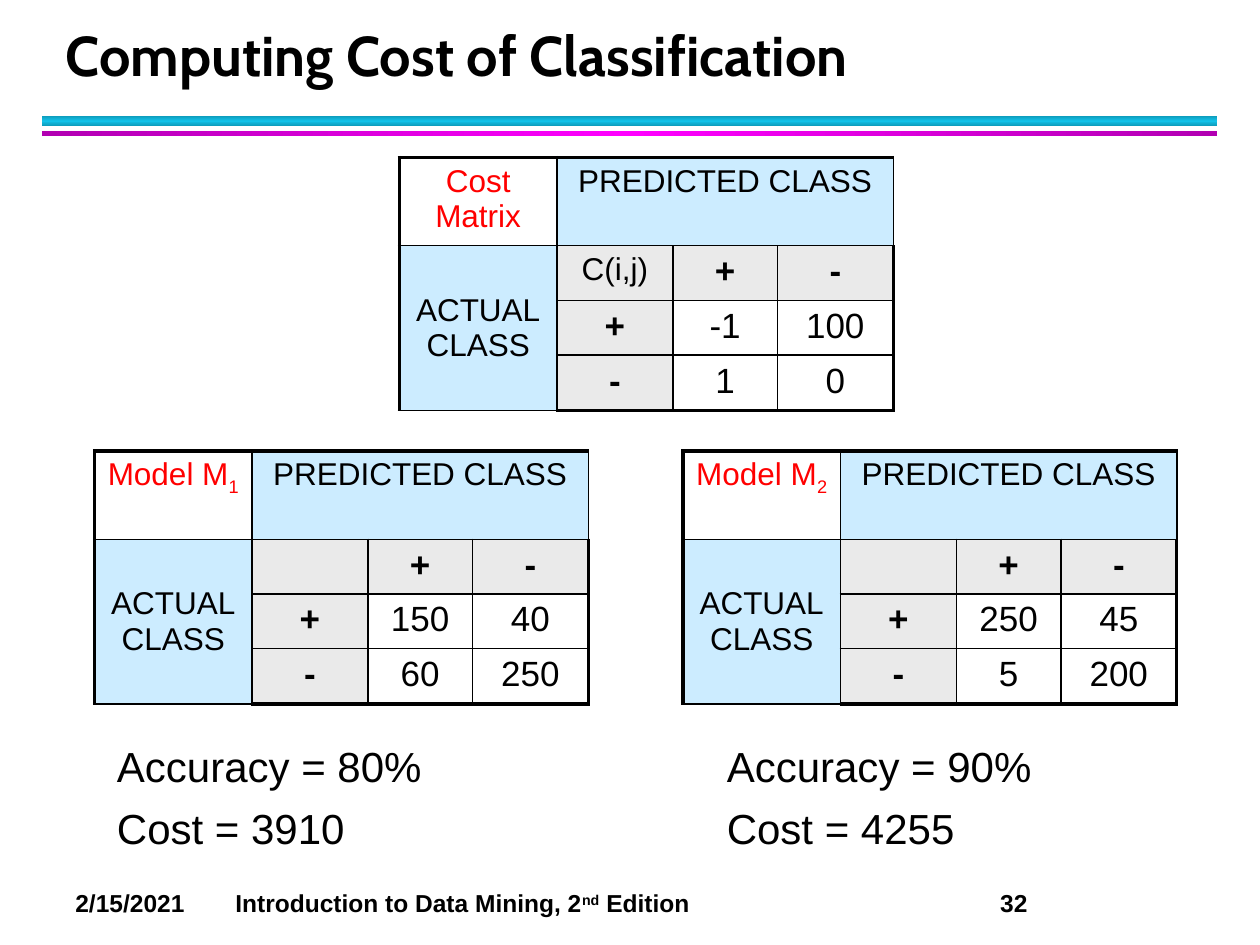
from copy import deepcopy
from dataclasses import dataclass

from lxml import etree
from pptx import Presentation
from pptx.dml.color import RGBColor
from pptx.enum.shapes import MSO_SHAPE
from pptx.enum.text import MSO_ANCHOR, PP_ALIGN
from pptx.oxml.ns import qn
from pptx.util import Inches, Pt

RECTANGLE = MSO_SHAPE.RECTANGLE
LEFT, CENTER = PP_ALIGN.LEFT, PP_ALIGN.CENTER
MIDDLE, BOTTOM = MSO_ANCHOR.MIDDLE, MSO_ANCHOR.BOTTOM

BLACK = RGBColor(0x00, 0x00, 0x00)
RED = RGBColor(0xFF, 0x00, 0x00)
PALE_BLUE = RGBColor(0xCC, 0xEC, 0xFF)
PALE_GRAY = RGBColor(0xEA, 0xEA, 0xEA)
TEAL = RGBColor(0x0E, 0x9B, 0xBA)
CYAN = RGBColor(0x12, 0xC2, 0xE9)
PURPLE = RGBColor(0xB2, 0x00, 0xB2)
MAGENTA = RGBColor(0xFF, 0x00, 0xFF)

COL_WIDTHS = (1.25, 0.92, 0.83, 0.92)
ROW_HEIGHTS = (0.7, 0.43, 0.43, 0.44)
OUTER_LINE, INNER_LINE = Pt(2.25), Pt(1)


@dataclass
class Bar:
    top: float
    height: float
    edge: RGBColor
    middle: RGBColor
    angle: int


@dataclass
class Matrix:
    left: float
    top: float
    name: str
    subscript: str
    corner: str
    counts: tuple[tuple[str, str], tuple[str, str]]


@dataclass
class Result:
    left: float
    lines: tuple[str, str]


BARS = (
    Bar(0.92, 0.08, TEAL, CYAN, 90),
    Bar(1.04, 0.04, PURPLE, MAGENTA, 0),
)
MATRICES = (
    Matrix(3.17, 1.25, "Cost Matrix", "", "C(i,j)", (("-1", "100"), ("1", "0"))),
    Matrix(0.75, 3.58, "Model M", "1", "", (("150", "40"), ("60", "250"))),
    Matrix(5.42, 3.58, "Model M", "2", "", (("250", "45"), ("5", "200"))),
)
RESULTS = (
    Result(0.83, ("Accuracy = 80%", "Cost = 3910")),
    Result(5.67, ("Accuracy = 90%", "Cost = 4255")),
)


def set_font(p, size: float, color=BLACK, bold=False, name="Arial") -> None:
    font = p.font
    font.name, font.size, font.bold = name, Pt(size), bold
    font.color.rgb = color


def add_run(p, text: str, baseline: int = 0) -> None:
    """Add a run, raised or lowered by a percentage of the font size."""
    r = p.add_run()
    r.text = text
    if baseline:
        r.font._element.set("baseline", str(baseline * 1000))


def add_bar(s, bar: Bar) -> None:
    sp = s.shapes.add_shape(RECTANGLE, Inches(0.33), Inches(bar.top),
                            Inches(9.33), Inches(bar.height))
    sp.shadow.inherit = False
    sp.line.fill.background()
    sp.fill.gradient()
    sp.fill.gradient_angle = bar.angle
    stops = sp._element.spPr.find(f".//{qn('a:gsLst')}")
    stops.insert(1, deepcopy(stops[0]))
    colors = (bar.edge, bar.middle, bar.edge)
    for i, (stop, color) in enumerate(zip(sp.fill.gradient_stops, colors)):
        stop.position = i / 2
        stop.color.rgb = color


def set_borders(cell, row: int, col: int) -> None:
    """Draw thick lines on the table's outer edges and thin ones inside."""
    outer = {"L": col == 0, "R": col == len(COL_WIDTHS) - 1,
             "T": row == 0, "B": row == len(ROW_HEIGHTS) - 1}
    tc_pr = cell._tc.get_or_add_tcPr()
    for side, is_outer in outer.items():
        width = OUTER_LINE if is_outer else INNER_LINE
        ln = etree.SubElement(tc_pr, qn(f"a:ln{side}"), w=str(width))
        fill = etree.SubElement(ln, qn("a:solidFill"))
        etree.SubElement(fill, qn("a:srgbClr"), val=str(BLACK))


def set_cell(cell, text: str, size=20, color=BLACK, bold=False, fill=None) -> None:
    p = cell.text_frame.paragraphs[0]
    p.text = text
    p.alignment = CENTER
    set_font(p, size, color, bold)
    if fill is None:
        cell.fill.background()
    else:
        cell.fill.solid()
        cell.fill.fore_color.rgb = fill


def add_matrix(s, m: Matrix) -> None:
    table = s.shapes.add_table(
        len(ROW_HEIGHTS), len(COL_WIDTHS), Inches(m.left), Inches(m.top),
        Inches(sum(COL_WIDTHS)), Inches(sum(ROW_HEIGHTS))).table
    table.first_row = table.horz_banding = False
    for column, width in zip(table.columns, COL_WIDTHS):
        column.width = Inches(width)
    for row, height in zip(table.rows, ROW_HEIGHTS):
        row.height = Inches(height)
    for row in range(len(ROW_HEIGHTS)):
        for col in range(len(COL_WIDTHS)):
            set_borders(table.cell(row, col), row, col)

    name, predicted, actual = table.cell(0, 0), table.cell(0, 1), table.cell(1, 0)
    predicted.merge(table.cell(0, 3))
    actual.merge(table.cell(3, 0))
    set_cell(name, m.name, 18, RED)
    if m.subscript:
        add_run(name.text_frame.paragraphs[0], m.subscript, -25)
    set_cell(predicted, "PREDICTED CLASS", 18, fill=PALE_BLUE)
    set_cell(actual, "ACTUAL\vCLASS", 18, fill=PALE_BLUE)
    actual.vertical_anchor = MIDDLE

    set_cell(table.cell(1, 1), m.corner, 18, fill=PALE_GRAY)
    for i, sign in enumerate("+-", start=2):
        set_cell(table.cell(1, i), sign, bold=True, fill=PALE_GRAY)
        set_cell(table.cell(i, 1), sign, bold=True, fill=PALE_GRAY)
    for row, counts in enumerate(m.counts, start=2):
        for col, count in enumerate(counts, start=2):
            set_cell(table.cell(row, col), count)


def add_text_box(s, left: float, top: float, width: float, height: float):
    tf = s.shapes.add_textbox(Inches(left), Inches(top),
                              Inches(width), Inches(height)).text_frame
    tf.word_wrap = True
    return tf


def add_result(s, result: Result) -> None:
    tf = add_text_box(s, result.left, 5.83, 3.33, 1.08)
    tf.text = "\n".join(result.lines)
    for p in tf.paragraphs:
        p.space_before, p.space_after = Pt(2.4), Pt(4)
        set_font(p, 24)


def add_title(s, text: str) -> None:
    title = s.shapes.title
    title.left, title.top = Inches(0.42), Inches(0.17)
    title.width, title.height = Inches(9.06), Inches(0.58)
    tf = title.text_frame
    tf.text = text
    tf.vertical_anchor = BOTTOM
    p = tf.paragraphs[0]
    p.alignment = LEFT
    p.line_spacing = Pt(36)
    set_font(p, 32, bold=True, name="Cabin")


def add_footer(s) -> None:
    p = add_text_box(s, 0.5, 7, 9.33, 0.34).paragraphs[0]
    set_font(p, 14, bold=True)
    tabs = etree.Element(qn("a:tabLst"))
    for position in (1.27, 7.34):
        etree.SubElement(tabs, qn("a:tab"), pos=str(Inches(position)), algn="l")
    p._p.get_or_add_pPr().insert(0, tabs)
    add_run(p, "2/15/2021\tIntroduction to Data Mining, 2")
    add_run(p, "nd", 30)
    add_run(p, " Edition\t32")


def main() -> None:
    prs = Presentation()
    prs.slide_width, prs.slide_height = Inches(10), Inches(7.5)
    s = prs.slides.add_slide(prs.slide_layouts[5])
    for bar in BARS:
        add_bar(s, bar)
    add_footer(s)
    add_title(s, "Computing Cost of Classification")
    for matrix in MATRICES:
        add_matrix(s, matrix)
    for result in RESULTS:
        add_result(s, result)
    prs.save("out.pptx")


if __name__ == "__main__":
    main()
